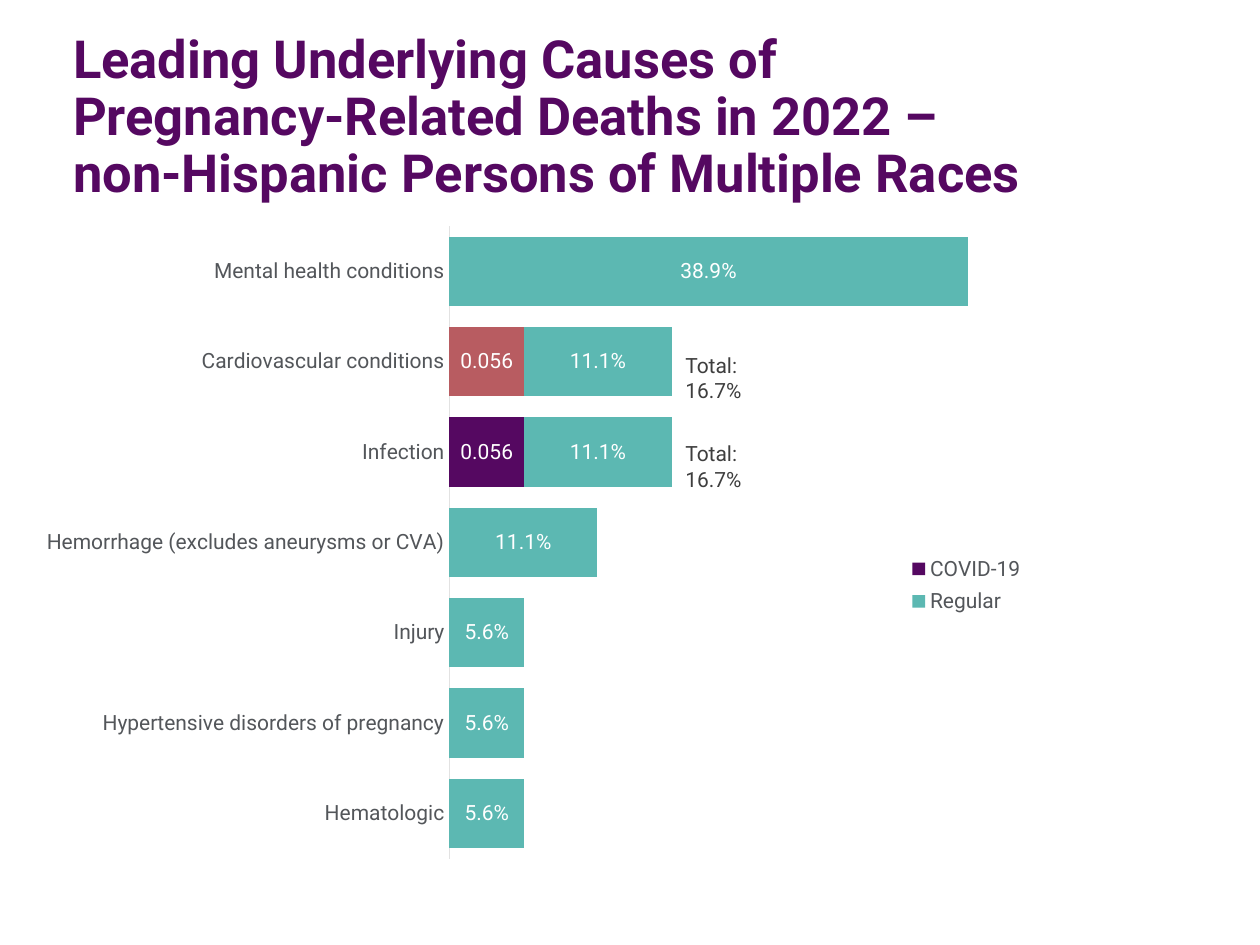
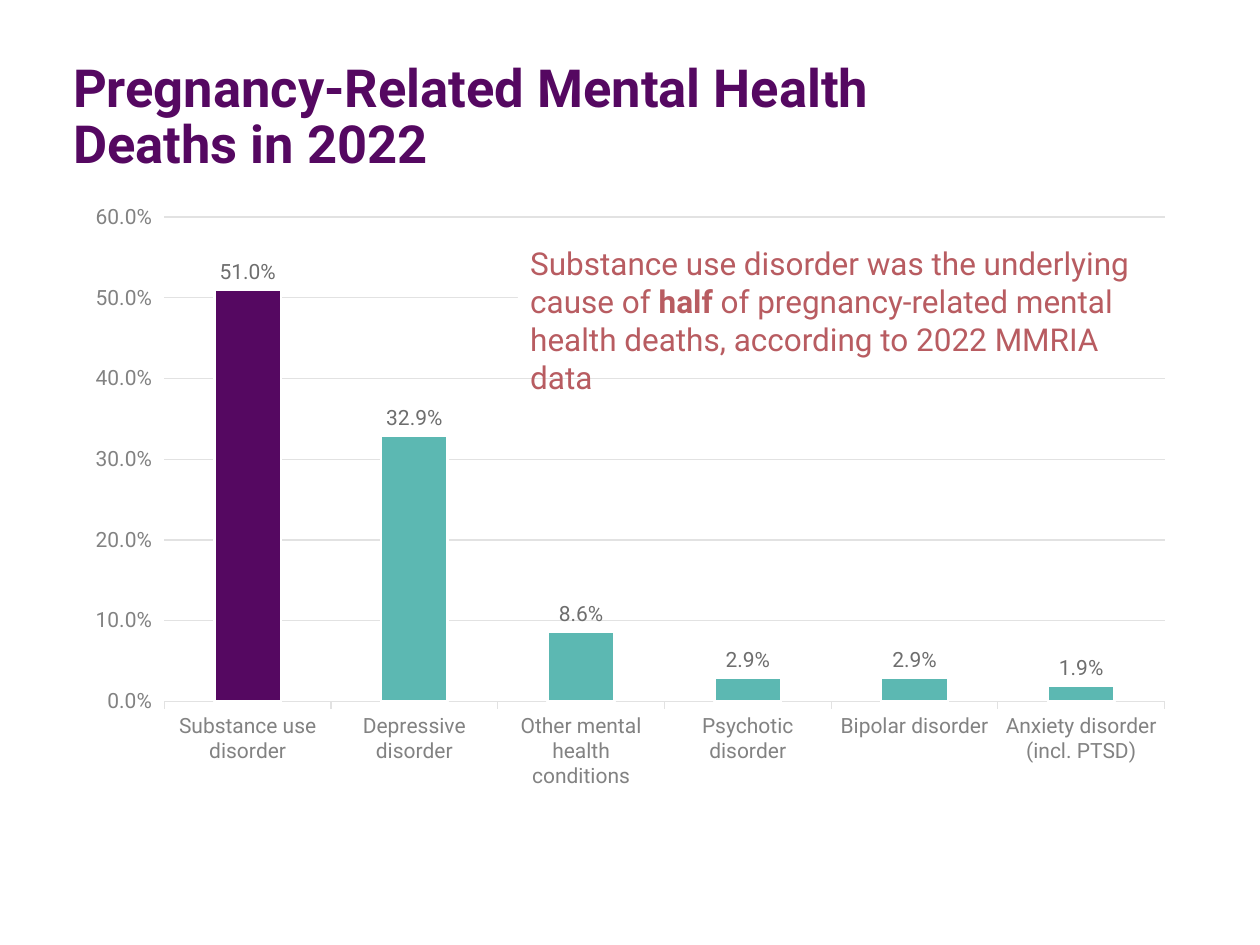
from lxml import etree
from pptx import Presentation
from pptx import util as u
from pptx.chart.data import CategoryChartData
from pptx.dml.color import RGBColor
from pptx.enum import chart as charts, text
from pptx.oxml import parse_xml
from pptx.oxml.ns import nsdecls, qn

FONT = "Roboto"
COLORS = {
    "purple": "550861", "teal": "5CB8B2", "red": "B85C61", "white": "FFFFFF",
    "rule": "E2E2E2", "slate": "53565A", "dark": "3E3E3E", "gray": "828282",
    "label": "6E6E6E",
}
LEFT, TITLE_TOP, TITLE_HEIGHT = 0.58, 0.35, 1.18
UNNAMED = ""

CAUSES = {
    "title": "Leading Underlying Causes of Pregnancy-Related Deaths in 2022 – "
             "non-Hispanic Persons of Multiple Races",
    "title_width": 7.92,
    "categories": [
        "Hematologic", "Hypertensive disorders of pregnancy", "Injury",
        "Hemorrhage (excludes aneurysms or CVA)", "Infection",
        "Cardiovascular conditions", "Mental health conditions",
    ],
    "series": [
        (UNNAMED, [None] * 5 + [0.056, None], "red", "General"),
        ("COVID-19", [None] * 4 + [0.056, None, None], "purple", "General"),
        ("Regular", [0.056] * 3 + [0.111] * 3 + [0.389], "teal", "0.0%"),
    ],
    "totals": [("Total: 16.7%", 2.75), ("Total: 16.7%", 3.45)],
}
MENTAL_HEALTH = {
    "title": "Pregnancy-Related Mental Health Deaths in 2022",
    "title_width": 7.17,
    "categories": [
        "Substance use disorder", "Depressive disorder",
        "Other mental health conditions", "Psychotic disorder",
        "Bipolar disorder", "Anxiety disorder (incl. PTSD)",
    ],
    "series": [(UNNAMED, [0.51, 0.329, 0.086, 0.029, 0.029, 0.019], "teal", "0.0%")],
    "callout": [
        ("Substance use disorder was the underlying cause of ", False),
        ("half", True),
        (" of pregnancy-related mental health deaths, according to 2022 MMRIA data", False),
    ],
}


def rgb(name):
    return RGBColor.from_string(COLORS[name])


def style(font, size, color, bold=False):
    font.name, font.size, font.bold = FONT, u.Pt(size), bold
    font.color.rgb = rgb(color)


def inches(*lengths):
    return [u.Inches(length) for length in lengths]


def add_titled_slide(presentation, content):
    slide = presentation.slides.add_slide(presentation.slide_layouts[5])
    title = slide.shapes.title
    title.left, title.top, title.width, title.height = inches(
        LEFT, TITLE_TOP, content["title_width"], TITLE_HEIGHT)
    frame = title.text_frame
    frame.text = content["title"]
    frame.auto_size = text.MSO_AUTO_SIZE.NONE
    frame.word_wrap = True
    frame.vertical_anchor = text.MSO_ANCHOR.MIDDLE
    frame.margin_left = 0
    frame.margin_top = frame.margin_right = frame.margin_bottom = u.Inches(0.1)
    paragraph = frame.paragraphs[0]
    paragraph.alignment = text.PP_ALIGN.LEFT
    paragraph.line_spacing = 0.9
    style(paragraph.runs[0].font, 30, "purple", True)
    return slide


def add_text(slide, box, runs, size, color):
    shape = slide.shapes.add_textbox(*inches(*box))
    frame = shape.text_frame
    frame.word_wrap = True
    for words, bold in runs:
        run = frame.paragraphs[0].add_run()
        run.text = words
        style(run.font, size, color, bold)
    return shape


def manual_layout(x, y, width, height, inner=False):
    """Chart layout element, with lengths as shares of the chart's size."""
    target = '<c:layoutTarget val="inner"/>' if inner else ""
    sizes = "".join(f'<c:{tag} val="{value}"/>' for tag, value in
                    zip("xywh", (x, y, width, height)))
    return parse_xml(
        f'<c:layout {nsdecls("c")}><c:manualLayout>{target}'
        f'<c:xMode val="edge"/><c:yMode val="edge"/>{sizes}'
        '</c:manualLayout></c:layout>')


def add_bars(slide, content, kind, box, plot_box, gap, axis_max, axis_color, label):
    data = CategoryChartData()
    data.categories = content["categories"]
    for name, values, _, number_format in content["series"]:
        data.add_series(name, values, number_format)
    chart = slide.shapes.add_chart(kind, *inches(*box), data).chart
    style(chart.font, 10, axis_color)
    chart.has_title = chart.has_legend = False

    plot = chart.plots[0]
    plot.gap_width = gap
    plot.vary_by_categories = False
    label_color, label_position = label
    for series, (_, _, color, number_format) in zip(plot.series, content["series"]):
        series.format.fill.solid()
        series.format.fill.fore_color.rgb = rgb(color)
        series.invert_if_negative = False
        labels = series.data_labels
        labels.show_value = True
        labels.position = label_position
        labels.number_format = number_format
        labels.number_format_is_linked = False
        style(labels.font, 12, label_color)

    for axis in (chart.category_axis, chart.value_axis):
        style(axis.tick_labels.font, 12, axis_color)
        axis.format.line.color.rgb = rgb("rule")
        axis.format.line.width = u.Pt(0.75)
    chart.value_axis.minimum_scale = 0
    chart.value_axis.maximum_scale = axis_max

    area = plot._element.getparent()
    for layout in area.findall(qn("c:layout")):
        area.remove(layout)
    area.insert(0, manual_layout(*plot_box, inner=True))
    return chart


def add_legend(chart, box, skipped_entry):
    chart.has_legend = True
    legend = chart.legend
    legend.position = charts.XL_LEGEND_POSITION.RIGHT
    legend.include_in_layout = True
    style(legend.font, 12, "slate")
    element = legend._element
    for layout in element.findall(qn("c:layout")):
        element.remove(layout)
    position = element.find(qn("c:legendPos"))
    position.addnext(manual_layout(*box))
    entry = etree.Element(qn("c:legendEntry"))
    for tag, value in (("c:idx", skipped_entry), ("c:delete", 1)):
        etree.SubElement(entry, qn(tag)).set("val", str(value))
    position.addnext(entry)


def build_causes(presentation):
    slide = add_titled_slide(presentation, CAUSES)
    chart = add_bars(
        slide, CAUSES, charts.XL_CHART_TYPE.BAR_STACKED,
        box=(0.21, 1.69, 8.29, 5.23), plot_box=(0.405, 0.02, 0.574, 0.96),
        gap=30, axis_max=0.45, axis_color="slate",
        label=("white", charts.XL_LABEL_POSITION.CENTER))
    chart.plots[0].overlap = 100
    chart.category_axis.major_tick_mark = charts.XL_TICK_MARK.NONE
    chart.value_axis.has_major_gridlines = False
    chart.value_axis.visible = False
    add_legend(chart, (0.82, 0.51, 0.16, 0.11), skipped_entry=2)
    for words, top in CAUSES["totals"]:
        add_text(slide, (5.34, top, 0.95, 0.5), [(words, False)], 12, "dark")


def build_mental_health(presentation):
    slide = add_titled_slide(presentation, MENTAL_HEALTH)
    chart = add_bars(
        slide, MENTAL_HEALTH, charts.XL_CHART_TYPE.COLUMN_CLUSTERED,
        box=(LEFT, TITLE_TOP + TITLE_HEIGHT, 10 - 2 * LEFT, 4.83),
        plot_box=(0.082, 0.04, 0.898, 0.796),
        gap=150, axis_max=0.6, axis_color="gray",
        label=("label", charts.XL_LABEL_POSITION.OUTSIDE_END))
    axis = chart.value_axis
    axis.major_unit = 0.1
    axis.tick_labels.number_format = "0.0%"
    axis.tick_labels.number_format_is_linked = False
    axis.format.line.fill.background()
    axis.major_gridlines.format.line.color.rgb = rgb("rule")
    axis.major_gridlines.format.line.width = u.Pt(0.75)

    series = chart.plots[0].series[0]
    highlight = series.points[0]
    highlight.format.fill.solid()
    highlight.format.fill.fore_color.rgb = rgb("purple")
    for bar in (series, highlight):
        bar.format.line.color.rgb = rgb("white")
        bar.format.line.width = u.Pt(1.5)

    callout = add_text(slide, (4.11, 1.89, 5.14, 1.01), MENTAL_HEALTH["callout"], 18, "red")
    callout.fill.solid()
    callout.fill.fore_color.rgb = rgb("white")


def main():
    presentation = Presentation()
    presentation.slide_width, presentation.slide_height = inches(10, 7.5)
    build_causes(presentation)
    build_mental_health(presentation)
    presentation.save("out.pptx")


if __name__ == "__main__":
    main()
